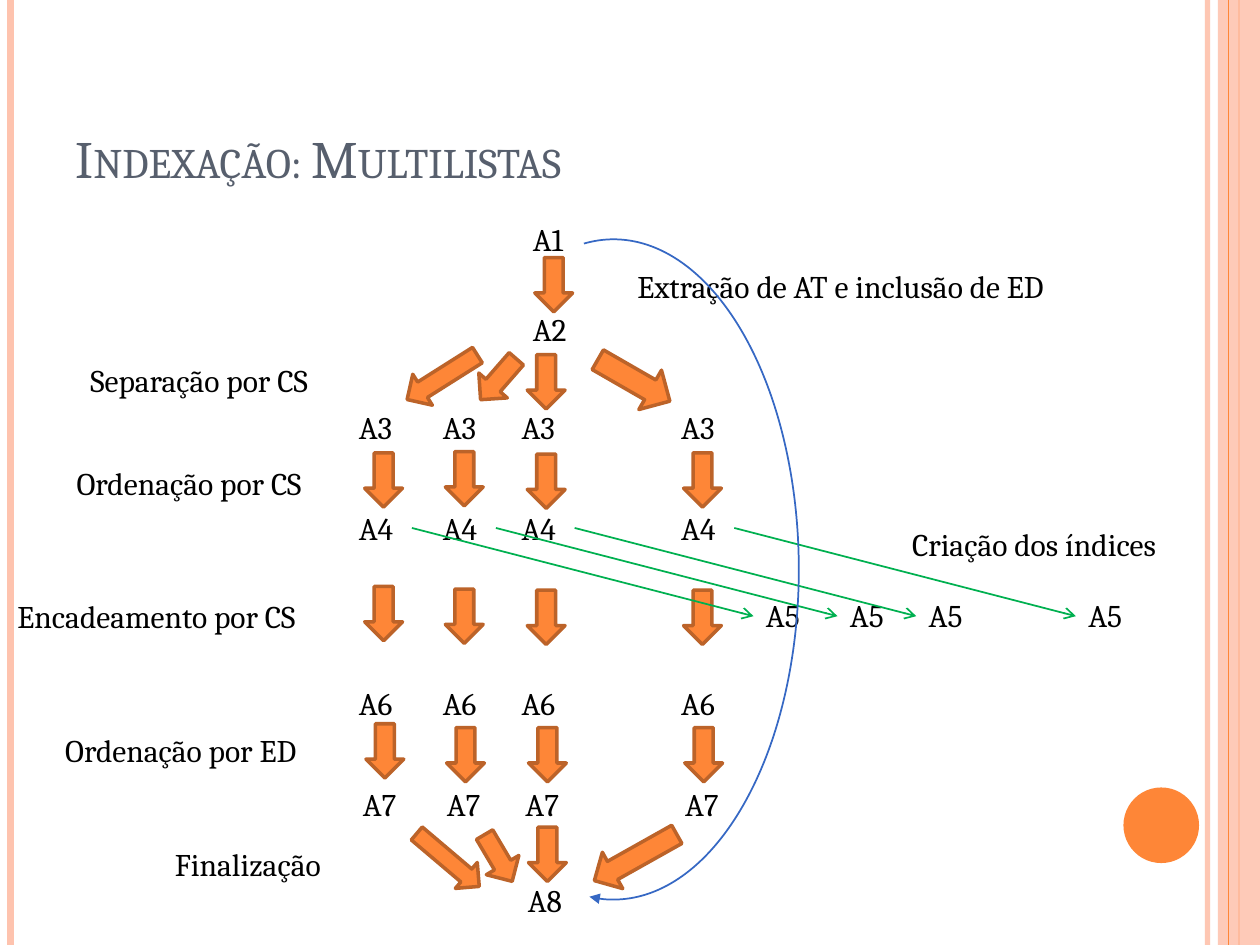
from pptx import Presentation
from pptx.util import Pt
from pptx.dml.color import RGBColor as RGB
from pptx.enum.shapes import MSO_SHAPE as Shape, MSO_CONNECTOR as Link
from pptx.enum.text import MSO_ANCHOR as Anchor, MSO_AUTO_SIZE as Auto
from pptx.oxml.ns import qn
from lxml.etree import SubElement as Sub

COLORS = {
    "orange": "FE8637", "rust": "BC6329", "peach": "FEC3AE", "slate": "575F6D",
    "black": "000000", "green": "00B050", "blue": "3668C4",
}
FONT = "Cambria"
WIDE, HIGH = 720, 540
BOX = 37.4, 28.8  # size of a node label


def tint(name):
    return RGB.from_string(COLORS[name])


def fade(part, share):
    """Give the solid fill inside part an opacity in percent."""
    color = next(part.iter(qn("a:srgbClr")))
    Sub(color, qn("a:alpha"), val=str(share * 1000))


def tip(item, kind):
    """Put an arrowhead at the end of a line."""
    Sub(item.line._get_or_add_ln(), qn("a:tailEnd"), type=kind)


def write(frame, text, size=18, color="black", small=False):
    run = frame.paragraphs[0].add_run()
    run.text = text
    run.font.size = Pt(size)
    run.font.name = FONT
    run.font.color.rgb = tint(color)
    if small:
        run.font._element.set("cap", "small")


class Page:
    """Holds the slide and draws styled elements, all in points."""

    def __init__(self, slide):
        self.shapes = slide.shapes

    def text(self, x, y, w, h, text, wrap=False, anchor=Anchor.TOP, **style):
        frame = self.shapes.add_textbox(Pt(x), Pt(y), Pt(w), Pt(h)).text_frame
        frame.word_wrap = wrap
        frame.auto_size = Auto.NONE if wrap else Auto.SHAPE_TO_FIT_TEXT
        frame.vertical_anchor = anchor
        write(frame, text, **style)

    def node(self, x, y, text):
        self.text(x, y, *BOX, text)

    def shape(self, kind, x, y, w, h, fill=None, line=None, width=1):
        item = self.shapes.add_shape(kind, Pt(x), Pt(y), Pt(w), Pt(h))
        item.shadow.inherit = False
        if fill:
            item.fill.solid()
            item.fill.fore_color.rgb = tint(fill)
        else:
            item.fill.background()
        if line:
            item.line.color.rgb = tint(line)
            item.line.width = Pt(width)
        else:
            item.line.fill.background()
        return item

    def arrow(self, x, y, w=31, h=21.6, turn=90):
        """Draw a block arrow centred on x, y."""
        item = self.shape(Shape.RIGHT_ARROW, x - w / 2, y - h / 2, w, h,
                          "orange", "rust", 2)
        item.rotation = turn

    def line(self, x1, y1, x2, y2, color, width=1, head=None):
        item = self.shapes.add_connector(Link.STRAIGHT, Pt(x1), Pt(y1), Pt(x2), Pt(y2))
        item.line.color.rgb = tint(color)
        item.line.width = Pt(width)
        if head:
            tip(item, head)
        Sub(item._element.spPr, qn("a:effectLst"))
        return item

    def rule(self, x, color, width):
        return self.line(x, 0, x, HIGH, color, width)


def frame(page):
    fade(page.rule(690, "peach", 3)._element, 93)
    page.rule(6, "peach", 4.5)
    page.rule(708, "orange", 1.5)
    fade(page.shape(Shape.RECTANGLE, 696, 0, 24, HIGH, "peach")._element, 87)
    page.rule(702, "orange", 0.75)
    page.shape(Shape.OVAL, 642, 450, 43.2, 43.2, "orange")


def chart(page):
    cols = [198, 246, 291, 382.2]
    shift = 232.6  # from a column to its index on the right
    page.node(297.4, 122.4, "A1")
    page.node(297.4, 173.5, "A2")
    page.node(294.5, 499.7, "A8")
    rows = [("A3", 0, 229.7), ("A4", 0, 287.3), ("A5", shift, 337),
            ("A6", 0, 387.4), ("A7", 2.2, 445)]
    for name, move, y in rows:
        for x in cols:
            page.node(x + move, y, name)

    mids = [219.2, 265.3, 312.1, 401.4]
    steps = [(0, [274.3, 273.6, 275, 274.3]),
             (0, [350.6, 352.1, 352.8, 352.8]),
             (0.7, [429.1, 431.3, 431.3, 431.3])]
    for move, tops in steps:
        for x, y in zip(mids, tops):
            page.arrow(x + move, y)
    for x, y in [(316.4, 162.7), (312.1, 218.2), (312.8, 488.2)]:
        page.arrow(x, y)
    slants = [(252.7, 215.6, 47.5, 20.9, 147.7), (284.8, 216.7, 31, 21.6, 131.1),
              (362.2, 217.4, 47.5, 25.9, 29.9), (256, 491.4, 46.8, 19.4, 40.3),
              (284.8, 490.3, 31, 21.6, 59.4), (363.2, 490, 54, 23.8, 150.7)]
    for slant in slants:
        page.arrow(*slant)

    for x in cols:
        page.line(x + BOX[0], 301.7, x + shift, 352.1, "green", head="arrow")


def notes(page):
    labels = [
        (357.1, 149, 290.2, "Extração de AT e inclusão de ED"),
        (44.6, 203, 163.4, "Separação por CS"),
        (36.7, 261.4, 167, "Ordenação por CS"),
        (514.1, 296.6, 175.7, "Criação dos índices"),
        (2.9, 337.7, 201.6, "Encadeamento por CS"),
        (30.2, 414, 169.9, "Ordenação por ED"),
        (92.9, 479.5, 110.9, "Finalização"),
    ]
    for x, y, w, text in labels:
        page.text(x, y, w, BOX[1], text)


def main():
    deck = Presentation()
    deck.slide_width, deck.slide_height = Pt(WIDE), Pt(HIGH)
    page = Page(deck.slides.add_slide(deck.slide_layouts[6]))
    frame(page)
    page.text(36, 21.6, 588.2, 90, "Indexação: Multilistas", wrap=True,
              anchor=Anchor.BOTTOM, size=30, color="slate", small=True)
    chart(page)
    notes(page)
    arc = page.shape(Shape.ARC, 244.8, 136.8, 211.7, 377.3, line="blue")
    arc.adjustments[0], arc.adjustments[1] = 158.88, 56.53
    tip(arc, "triangle")
    deck.save("out.pptx")


if __name__ == "__main__":
    main()
